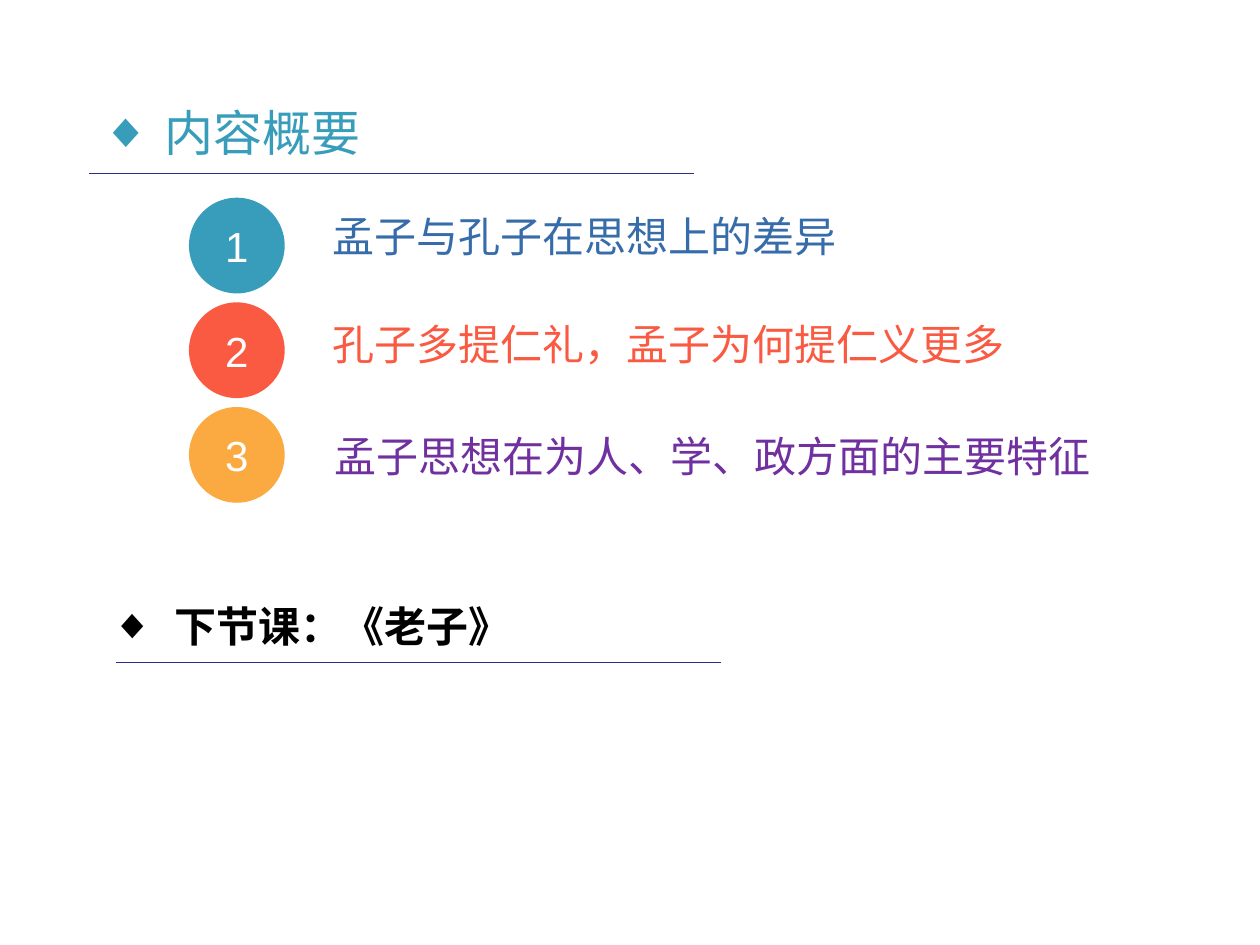
from lxml.etree import SubElement
from pptx import Presentation
from pptx.dml.color import RGBColor
from pptx.enum.shapes import MSO_CONNECTOR as Connector, MSO_SHAPE as Shape
from pptx.enum.text import MSO_ANCHOR as Anchor, PP_ALIGN as Align
from pptx.oxml.ns import qn
from pptx.util import Pt

CJK_FONT = "Noto Sans CJK SC"
TEAL = "389DBA"


def rgb(value):
    return RGBColor.from_string(value)


class SlideBuilder:
    rule_color = "2D2D8A"
    rule_length = 345.6
    badge_size = 54.7

    def __init__(self, slide):
        self.shapes = slide.shapes

    def add_run(self, paragraph, text, color, **formats):
        run = paragraph.add_run()
        run.text = text
        run.font.color.rgb = rgb(color)
        for name, value in formats.items():
            setattr(run.font, name, value)
        SubElement(run._r.get_or_add_rPr(), qn("a:ea"), typeface=CJK_FONT)

    def add_text(self, left, top, width, height, text, color,
                 bullet=False, anchor=Anchor.TOP, **formats):
        box = self.shapes.add_textbox(Pt(left), Pt(top), Pt(width), Pt(height))
        frame = box.text_frame
        frame.word_wrap = True
        frame.vertical_anchor = anchor
        paragraph = frame.paragraphs[0]
        if bullet:
            self.add_diamond(paragraph)
        self.add_run(paragraph, text, color, **formats)

    def add_diamond(self, paragraph):
        """Give the paragraph a diamond bullet with a hanging indent."""
        properties = paragraph._p.get_or_add_pPr()
        properties.set("marL", str(Pt(36)))
        properties.set("indent", str(Pt(-36)))
        SubElement(properties, qn("a:buFont"), typeface="Arial")
        SubElement(properties, qn("a:buChar"), char="◆")

    def add_rule(self, left, top):
        rule = self.shapes.add_connector(
            Connector.STRAIGHT, Pt(left), Pt(top), Pt(left + self.rule_length), Pt(top))
        rule.line.color.rgb = rgb(self.rule_color)
        rule.line.width = Pt(0.5)
        SubElement(rule._element.spPr, qn("a:effectLst"))

    def add_badge(self, left, top, number, color):
        size = Pt(self.badge_size)
        badge = self.shapes.add_shape(Shape.OVAL, Pt(left), Pt(top), size, size)
        badge.shadow.inherit = False
        badge.fill.solid()
        badge.fill.fore_color.rgb = rgb(color)
        badge.line.fill.background()
        frame = badge.text_frame
        frame.word_wrap = False
        frame.vertical_anchor = Anchor.MIDDLE
        paragraph = frame.paragraphs[0]
        paragraph.alignment = Align.CENTER
        self.add_run(paragraph, str(number), "FFFFFF", name="Arial", size=Pt(24))


def main():
    deck = Presentation()
    deck.slide_width, deck.slide_height = Pt(720), Pt(540)
    builder = SlideBuilder(deck.slides.add_slide(deck.slide_layouts[6]))

    builder.add_text(51, 43.2, 569, 64.8, "内容概要", TEAL, bullet=True,
                     anchor=Anchor.MIDDLE, name="Arial", size=Pt(28))
    builder.add_rule(51, 99.4)

    topics = [
        ("孟子与孔子在思想上的差异", TEAL, "366CAA", 182.9, 116.6),
        ("孔子多提仁礼，孟子为何提仁义更多", "FA5A41", "FA5A41", 182.9, 178.6),
        ("孟子思想在为人、学、政方面的主要特征", "FAAA41", "7030A0", 184.3, 242.6),
    ]
    for index, (topic, badge_color, text_color, left, top) in enumerate(topics):
        builder.add_badge(108, 113 + index * 59.8, index + 1, badge_color)
        builder.add_text(left, top, 487.4, 41, topic, text_color,
                         name=CJK_FONT, size=Pt(24))

    builder.add_text(56.9, 339.8, 424, 41, "下节课：《老子》", "000000", bullet=True,
                     name="Arial", size=Pt(24), bold=True)
    builder.add_rule(66.2, 378.7)

    deck.save("out.pptx")


if __name__ == "__main__":
    main()
